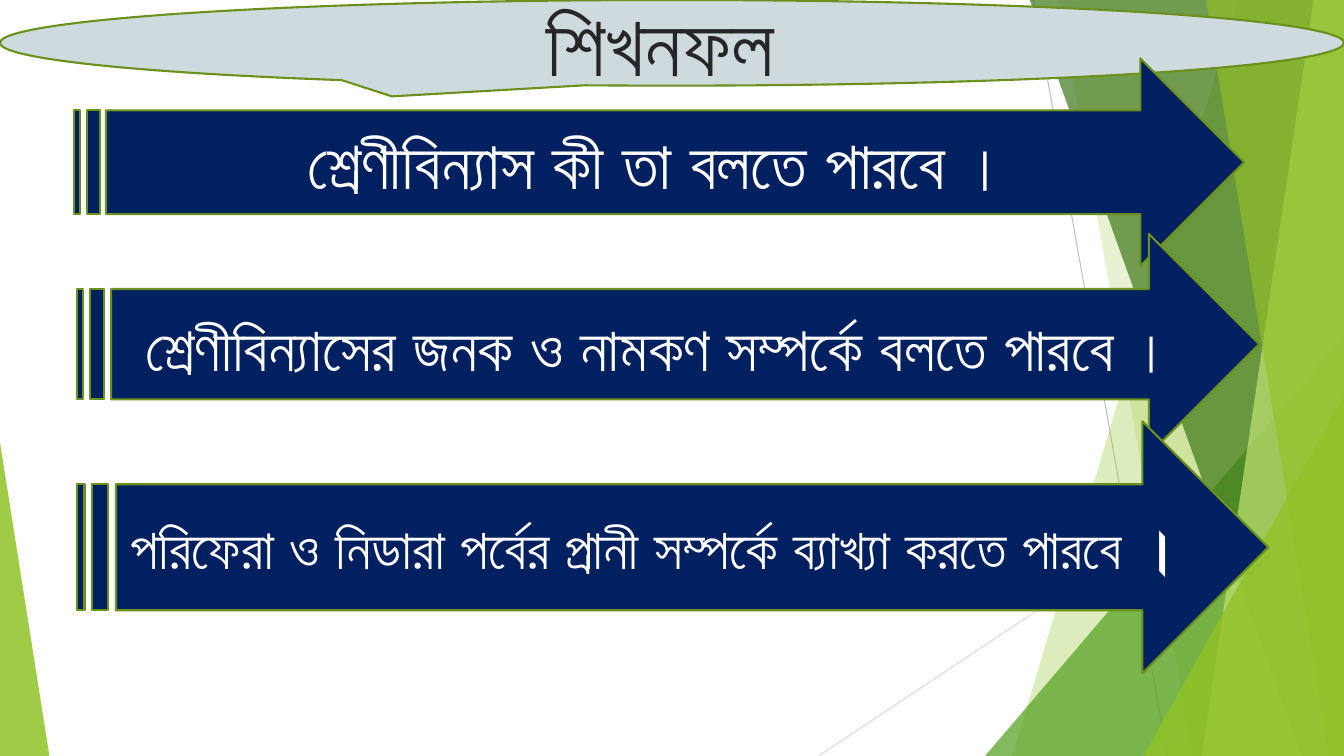
from lxml.etree import SubElement
from pptx import Presentation
from pptx.dml.color import RGBColor
from pptx.enum.shapes import MSO_CONNECTOR as Connector, MSO_SHAPE as Preset
from pptx.enum.text import MSO_ANCHOR as Anchor, PP_ALIGN as Align
from pptx.oxml.ns import qn
from pptx.util import Inches, Pt

THEME = {
    "font": "Arial", "title_size": 60, "large": 48, "medium": 44, "small": 40,
    "title_text": "262626", "callout": "CFDADF", "arrow": "002060",
    "arrow_text": "FFFFFF", "outline": "6B901C",
    "green": "90C226", "leaf": "54A021", "forest": "3F7819", "lime": "C0E474",
    "dark_rule": "BFBFBF", "light_rule": "D9D9D9",
}
WIDTH, HEIGHT, BLEED = 13.33, 7.5, -0.01


def paint(shape, color, opacity=100):
    shape.shadow.inherit = False
    shape.fill.solid()
    shape.fill.fore_color.rgb = RGBColor.from_string(THEME[color])
    if opacity < 100:
        color_element = shape.fill._xPr.find(qn("a:solidFill"))[0]
        SubElement(color_element, qn("a:alpha"), val=str(opacity * 1000))
    shape.line.fill.background()


def add_banner(preset, box, color, text_color, runs):
    shape = slide.shapes.add_shape(preset, *map(Inches, box))
    paint(shape, color)
    shape.line.color.rgb = RGBColor.from_string(THEME["outline"])
    shape.line.width = Pt(1.5)
    frame = shape.text_frame
    frame.word_wrap = True
    frame.vertical_anchor = Anchor.MIDDLE
    paragraph = frame.paragraphs[0]
    paragraph.alignment = Align.CENTER
    for text, size, bold in runs:
        run = paragraph.add_run()
        run.text = text
        run.font.name = THEME["font"]
        run.font.size = Pt(THEME[size])
        run.font.bold = bold
        run.font.color.rgb = RGBColor.from_string(THEME[text_color])


presentation = Presentation()
presentation.slide_width = Inches(WIDTH)
presentation.slide_height = Inches(HEIGHT)
slide = presentation.slides.add_slide(presentation.slide_layouts[6])

rules = [
    (10.25, 0, 11.58, HEIGHT, "dark_rule"),
    (WIDTH, 4.03, 8.12, HEIGHT, "light_rule"),
]
for *ends, color in rules:
    rule = slide.shapes.add_connector(Connector.STRAIGHT, *map(Inches, ends))
    rule.line.color.rgb = RGBColor.from_string(THEME[color])
    rule.line.width = Pt(0.75)
    SubElement(rule._element.spPr, qn("a:effectLst"))

facets = [
    ("ribbon", (12.28, 10.04), "green", 30),
    ("ribbon", (10.5, 11.83), "green", 20),
    ("triangle", (9.77, 3.33, 3.56, 1), "leaf", 72),
    ("ribbon", (10.21, 12.91), "forest", 70),
    ("ribbon", (13.03, 11.92), "lime", 70),
    ("ribbon", (11.96, 13.18), "green", 65),
    ("triangle", (11.34, 3.93, 1.99, 1), "green", 80),
    ("triangle", (0, 4.39, 0.49, 0), "green", 85),
]
for kind, geometry, color, opacity in facets:
    if kind == "ribbon":
        top_x, bottom_x = geometry
        corners = [(WIDTH, BLEED), (WIDTH, HEIGHT), (bottom_x, HEIGHT)]
        builder = slide.shapes.build_freeform(Inches(top_x), Inches(BLEED))
        builder.add_line_segments([(Inches(x), Inches(y)) for x, y in corners])
        facet = builder.convert_to_shape()
    else:
        left, top, width, apex = geometry
        box = (left, top, width, HEIGHT - top)
        facet = slide.shapes.add_shape(Preset.ISOSCELES_TRIANGLE, *map(Inches, box))
        facet.adjustments[0] = apex
    paint(facet, color, opacity)

add_banner(Preset.OVAL_CALLOUT, (0, 0, WIDTH, 0.85), "callout", "title_text",
           [("শিখনফল ", "title_size", True)])

outcomes = [
    ((0.73, 0.58, 11.61, 2.06), [
        (" শ্রেণীবিন্যাস কী তা বলতে পারবে ", "large", True),
        ("।", "large", False),
    ]),
    ((0.76, 2.32, 11.73, 2.19), [
        (" ", "large", True),
        ("শ্রেণীবিন্যাসের জনক ও নামকণ সম্পর্কে বলতে পারবে ", "medium", True),
        ("। ", "medium", False),
    ]),
    ((0.76, 4.18, 11.82, 2.5), [
        ("পরিফেরা ও নিডারা পর্বের প্রানী সম্পর্কে ব্যাখ্যা করতে পারবে । ", "small", True),
    ]),
]
for box, runs in outcomes:
    add_banner(Preset.STRIPED_RIGHT_ARROW, box, "arrow", "arrow_text", runs)

presentation.save("out.pptx")
